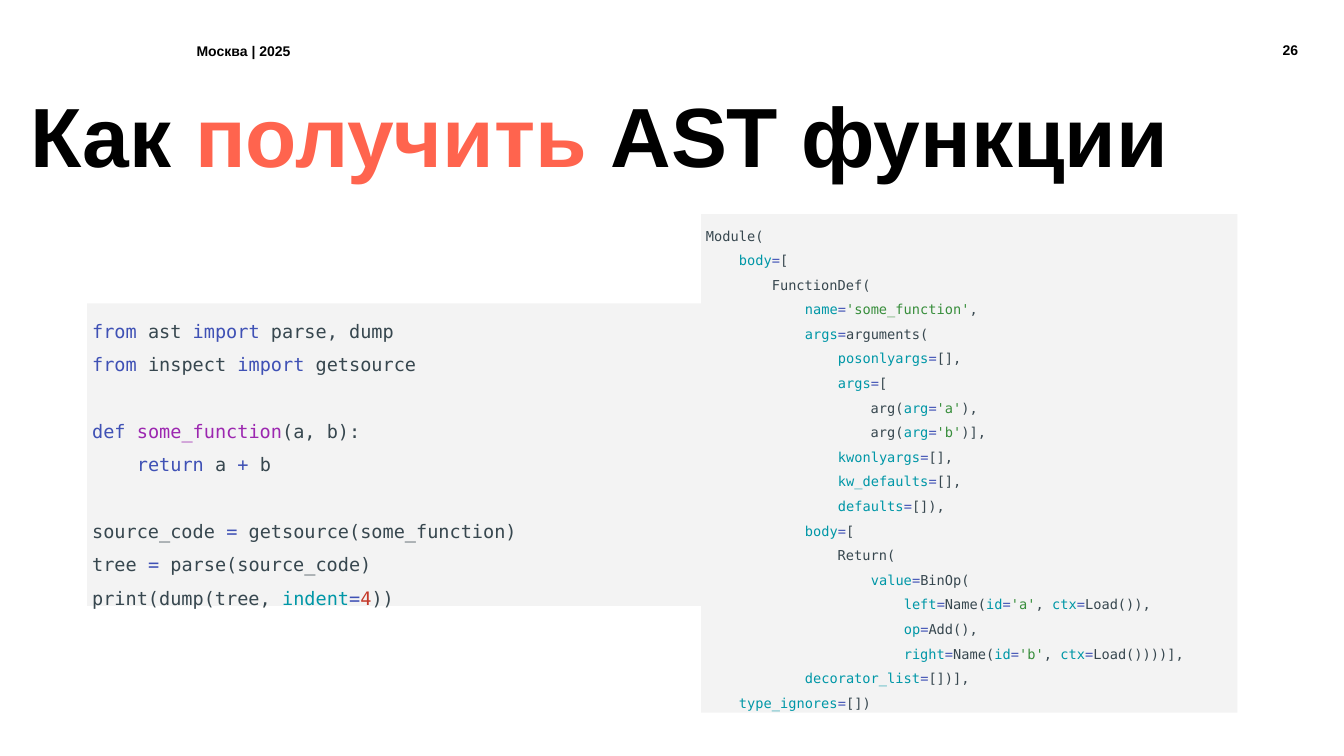
import itertools

import pptx
import pptx.dml.color
import pptx.enum.shapes
import pptx.enum.text
import pptx.util

ANCHOR = pptx.enum.text.MSO_ANCHOR
ALIGN = pptx.enum.text.PP_ALIGN
WIDE, HIGH = pptx.util.Inches(26.67), pptx.util.Inches(15)

THEME = {
    "hues": {
        "ink": "000000", "accent": "FF644E", "panel": "F3F3F3",
        "plain": "37474F", "key": "3F51B5", "func": "9C27B0",
        "param": "0097A7", "text": "388E3C", "num": "C53929",
    },
    "sizes": {"label": 20, "title": 120, "code": 26.5, "tree": 19.5},
    "fonts": {"main": "Arial", "code": "DejaVu Sans Mono"},
}
KEYS = {"from", "import", "def", "return"}
PITCH = 1.8

SOURCE = """from ast import parse, dump
from inspect import getsource

def some_function(a, b):
    return a + b

source_code = getsource(some_function)
tree = parse(source_code)
print(dump(tree, indent=4))"""

TREE = """Module(
    body=[
        FunctionDef(
            name='some_function',
            args=arguments(
                posonlyargs=[],
                args=[
                    arg(arg='a'),
                    arg(arg='b')],
                kwonlyargs=[],
                kw_defaults=[],
                defaults=[]),
            body=[
                Return(
                    value=BinOp(
                        left=Name(id='a', ctx=Load()),
                        op=Add(),
                        right=Name(id='b', ctx=Load())))],
            decorator_list=[])],
    type_ignores=[])"""


def share(left, top, width, height):
    """Turn percentages of the slide into lengths."""
    return [int(part * full / 100) for part, full in
            zip((left, top, width, height), (WIDE, HIGH, WIDE, HIGH))]


def style(item, **values):
    """Set each named attribute on an object."""
    for name, value in values.items():
        setattr(item, name, value)


def color(name):
    """Look up a theme colour."""
    return pptx.dml.color.RGBColor.from_string(THEME["hues"][name])


def frame(shape, pad, **values):
    """Format the text frame of a shape and return it."""
    side, edge = (pptx.util.Inches(size) for size in pad)
    style(shape.text_frame, margin_left=side, margin_right=side,
          margin_top=edge, margin_bottom=edge, word_wrap=True,
          auto_size=pptx.enum.text.MSO_AUTO_SIZE.NONE, **values)
    return shape.text_frame


def write(para, parts, size, face="main", bold=False):
    """Add coloured runs to a paragraph."""
    for text, hue in parts:
        run = para.add_run()
        run.text = text
        style(run.font, size=pptx.util.Pt(THEME["sizes"][size]),
              name=THEME["fonts"][face], bold=bold)
        run.font.color.rgb = color(hue)


def kind(char):
    """Sort a character into word, sign or other."""
    if char.isalnum() or char in "_'":
        return "word"
    return "sign" if char in "=+" else "other"


def paint(line):
    """Split a code line into runs of one colour."""
    words = ["".join(group) for _, group in itertools.groupby(line, kind)]

    def hue(spot):
        """Choose the colour of one word."""
        word = words[spot]
        if word in KEYS or kind(word[0]) == "sign":
            return "key"
        if word[0] == "'":
            return "text"
        if word.isdigit():
            return "num"
        if spot > 1 and words[spot - 2] == "def":
            return "func"
        if kind(word[0]) == "word" and words[spot + 1:spot + 2] == ["="]:
            return "param"
        return "plain"

    for name, spots in itertools.groupby(range(len(words)), hue):
        yield "".join(words[spot] for spot in spots), name


def label(slide, box, text, anchor, align):
    """Place a small bold label in the header."""
    body = frame(slide.shapes.add_textbox(*box), (0.06, 0.06),
                 vertical_anchor=anchor)
    body.paragraphs[0].alignment = align
    write(body.paragraphs[0], [(text, "ink")], "label", bold=True)


def title(slide, box, parts):
    """Fill the title placeholder."""
    head = slide.shapes.title
    style(head, **dict(zip(("left", "top", "width", "height"), box)))
    para = frame(head, (0.1, 0.05), vertical_anchor=ANCHOR.TOP).paragraphs[0]
    style(para, alignment=ALIGN.LEFT, line_spacing=0.9)
    write(para, parts, "title", bold=True)


def panel(slide, box, code, size):
    """Draw a code panel with highlighted lines."""
    shape = slide.shapes.add_shape(
        pptx.enum.shapes.MSO_SHAPE.RECTANGLE, *box)
    shape.shadow.inherit = False
    shape.fill.solid()
    shape.fill.fore_color.rgb = color("panel")
    shape.line.fill.background()
    body = frame(shape, (0.1, 0.1), vertical_anchor=ANCHOR.TOP)
    para = body.paragraphs[0]
    gap = pptx.util.Pt(PITCH * THEME["sizes"][size])
    for block, lines in enumerate(code.split("\n\n")):
        for row, line in enumerate(lines.split("\n")):
            if block or row:
                para = body.add_paragraph()
            style(para, alignment=ALIGN.LEFT, line_spacing=1.5,
                  space_before=gap if block and not row else 0)
            write(para, paint(line), size, "code")


def main():
    """Build and save the slide."""
    deck = pptx.Presentation()
    style(deck, slide_width=WIDE, slide_height=HIGH)
    slide = deck.slides.add_slide(deck.slide_layouts[5])
    label(slide, share(14.4, 5.27, 10.39, 3), "Москва | 2025",
          ANCHOR.TOP, ALIGN.LEFT)
    label(slide, share(94.11, 5.13, 2.7, 3), "26",
          ANCHOR.BOTTOM, ALIGN.RIGHT)
    title(slide, share(1.91, 12.2, 103.56, 12.8),
          [("Как ", "ink"), ("получить", "accent"), (" AST функции", "ink")])
    panel(slide, share(6.49, 40.13, 45.86, 40), SOURCE, "code")
    panel(slide, share(52.16, 28.33, 39.9, 65.93), TREE, "tree")
    deck.save("out.pptx")


if __name__ == "__main__":
    main()
